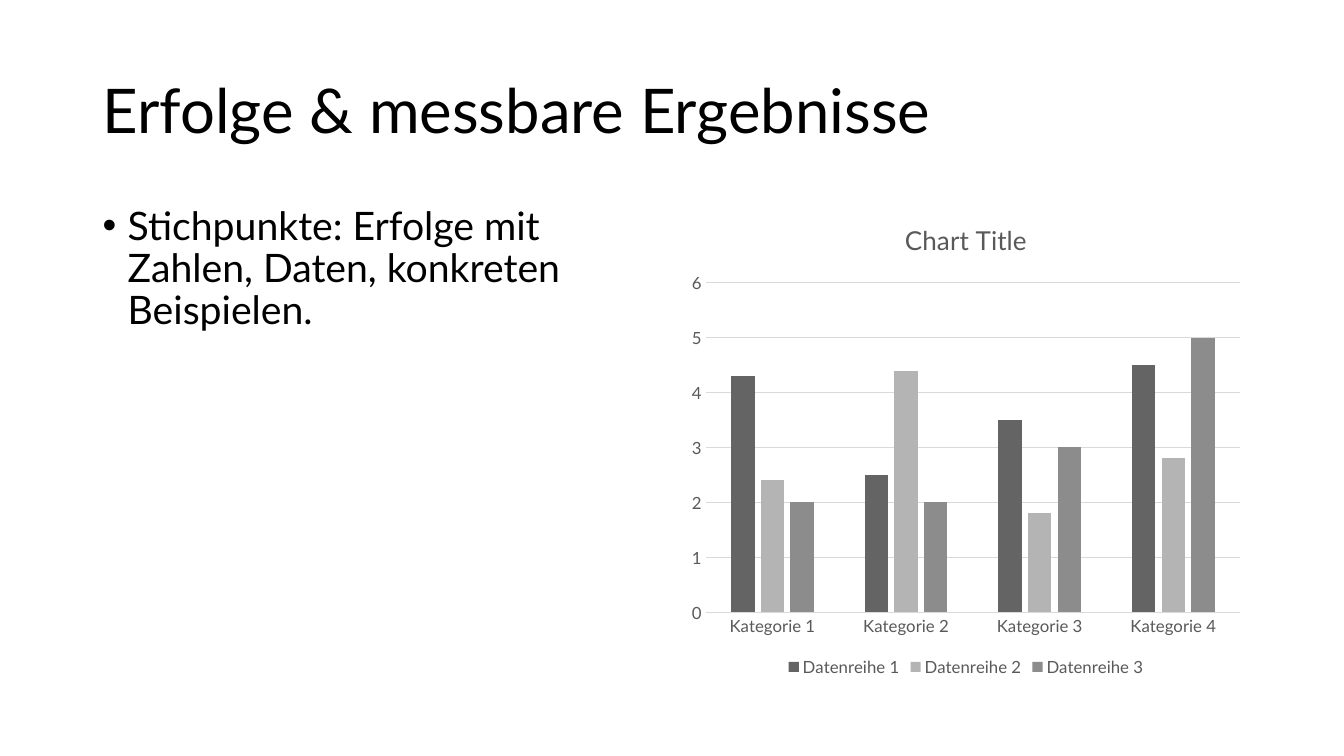
from dataclasses import dataclass

from lxml.etree import SubElement
from pptx import Presentation
from pptx.chart.chart import Chart
from pptx.chart.data import CategoryChartData
from pptx.dml.color import RGBColor
from pptx.enum.chart import XL_CHART_TYPE, XL_LEGEND_POSITION, XL_TICK_MARK
from pptx.enum.text import MSO_ANCHOR, MSO_AUTO_SIZE, PP_ALIGN
from pptx.oxml.ns import qn
from pptx.shapes.placeholder import SlidePlaceholder
from pptx.slide import Slide
from pptx.text.text import Font
from pptx.util import Cm, Pt

COLORS = {
    "background": "FFFFFF",
    "text": "000000",
    "label": "595959",
    "grid": "D9D9D9",
    "dark": "646464",
    "light": "B4B4B4",
    "medium": "8C8C8C",
}
FONT_NAME = "Lato"
CATEGORIES = [f"Kategorie {number}" for number in range(1, 5)]


@dataclass(frozen=True)
class Box:
    left: float
    top: float
    width: float
    height: float


@dataclass(frozen=True)
class DataRow:
    name: str
    values: tuple[float, ...]
    color: str


HEADLINE_BOX = Box(2.33, 1.01, 29.21, 3.68)
ACHIEVEMENTS_BOX = Box(2.33, 5.07, 14.39, 12.09)
RESULTS_BOX = Box(17.15, 5.07, 14.39, 12.09)

DATA_ROWS = [
    DataRow("Datenreihe 1", (4.3, 2.5, 3.5, 4.5), "dark"),
    DataRow("Datenreihe 2", (2.4, 4.4, 1.8, 2.8), "light"),
    DataRow("Datenreihe 3", (2, 2, 3, 5), "medium"),
]


def rgb(color: str) -> RGBColor:
    return RGBColor.from_string(COLORS[color])


def style_font(font: Font, size: float, color: str) -> None:
    font.name = FONT_NAME
    font.size = Pt(size)
    font.bold = False
    font.color.rgb = rgb(color)


def fill_placeholder(
    placeholder: SlidePlaceholder, box: Box, text: str, size: float, anchor: MSO_ANCHOR
) -> None:
    placeholder.left, placeholder.top = Cm(box.left), Cm(box.top)
    placeholder.width, placeholder.height = Cm(box.width), Cm(box.height)
    frame = placeholder.text_frame
    frame.text = text
    frame.word_wrap = True
    frame.auto_size = MSO_AUTO_SIZE.NONE
    frame.vertical_anchor = anchor
    paragraph = frame.paragraphs[0]
    paragraph.alignment = PP_ALIGN.LEFT
    paragraph.line_spacing = 0.9
    style_font(paragraph.font, size, "text")


def add_bullet(placeholder: SlidePlaceholder) -> None:
    paragraph = placeholder.text_frame.paragraphs[0]
    paragraph.space_before = Pt(10)
    properties = paragraph.font._element.getparent()
    indent = Cm(0.635)
    properties.set("marL", str(indent))
    properties.set("indent", str(-indent))
    bullet_font = SubElement(properties, qn("a:buFont"))
    bullet_font.set("typeface", "Arial")
    bullet = SubElement(properties, qn("a:buChar"))
    bullet.set("char", "•")
    properties.append(paragraph.font._element)


def style_axes(chart: Chart) -> None:
    for axis in (chart.category_axis, chart.value_axis):
        axis.major_tick_mark = XL_TICK_MARK.NONE
        axis.minor_tick_mark = XL_TICK_MARK.NONE
        style_font(axis.tick_labels.font, 12, "label")
    value_axis = chart.value_axis
    value_axis.minimum_scale = 0
    value_axis.maximum_scale = 6
    value_axis.major_unit = 1
    value_axis.has_major_gridlines = True
    value_axis.format.line.fill.background()
    for line in (
        chart.category_axis.format.line,
        value_axis.major_gridlines.format.line,
    ):
        line.color.rgb = rgb("grid")
        line.width = Pt(0.75)


def add_results_chart(slide: Slide, box: Box) -> None:
    results = CategoryChartData()
    results.categories = CATEGORIES
    for row in DATA_ROWS:
        results.add_series(row.name, row.values)
    chart = slide.shapes.add_chart(
        XL_CHART_TYPE.COLUMN_CLUSTERED,
        Cm(box.left),
        Cm(box.top),
        Cm(box.width),
        Cm(box.height),
        results,
    ).chart
    style_font(chart.font, 10, "text")

    chart.has_title = True
    chart_title = chart.chart_title
    chart_title.include_in_layout = False
    chart_title.text_frame.text = "Chart Title"
    style_font(chart_title.text_frame.paragraphs[0].font, 18.6, "label")

    chart.has_legend = True
    chart.legend.position = XL_LEGEND_POSITION.BOTTOM
    chart.legend.include_in_layout = False
    style_font(chart.legend.font, 12, "label")
    style_axes(chart)

    columns = chart.plots[0]
    columns.vary_by_categories = False
    columns.gap_width = 219
    columns.overlap = -27
    for series, row in zip(columns.series, DATA_ROWS):
        series.invert_if_negative = False
        series.format.fill.solid()
        series.format.fill.fore_color.rgb = rgb(row.color)


def main() -> None:
    presentation = Presentation()
    presentation.slide_width = Cm(33.87)
    presentation.slide_height = Cm(19.05)
    slide = presentation.slides.add_slide(presentation.slide_layouts[1])
    slide.background.fill.solid()
    slide.background.fill.fore_color.rgb = rgb("background")

    headline = slide.shapes.title
    fill_placeholder(
        headline, HEADLINE_BOX, "Erfolge & messbare Ergebnisse", 44, MSO_ANCHOR.MIDDLE
    )
    achievements = slide.placeholders[1]
    fill_placeholder(
        achievements,
        ACHIEVEMENTS_BOX,
        "Stichpunkte: Erfolge mit Zahlen, Daten, konkreten Beispielen.",
        28,
        MSO_ANCHOR.TOP,
    )
    add_bullet(achievements)
    add_results_chart(slide, RESULTS_BOX)
    presentation.save("out.pptx")


if __name__ == "__main__":
    main()
